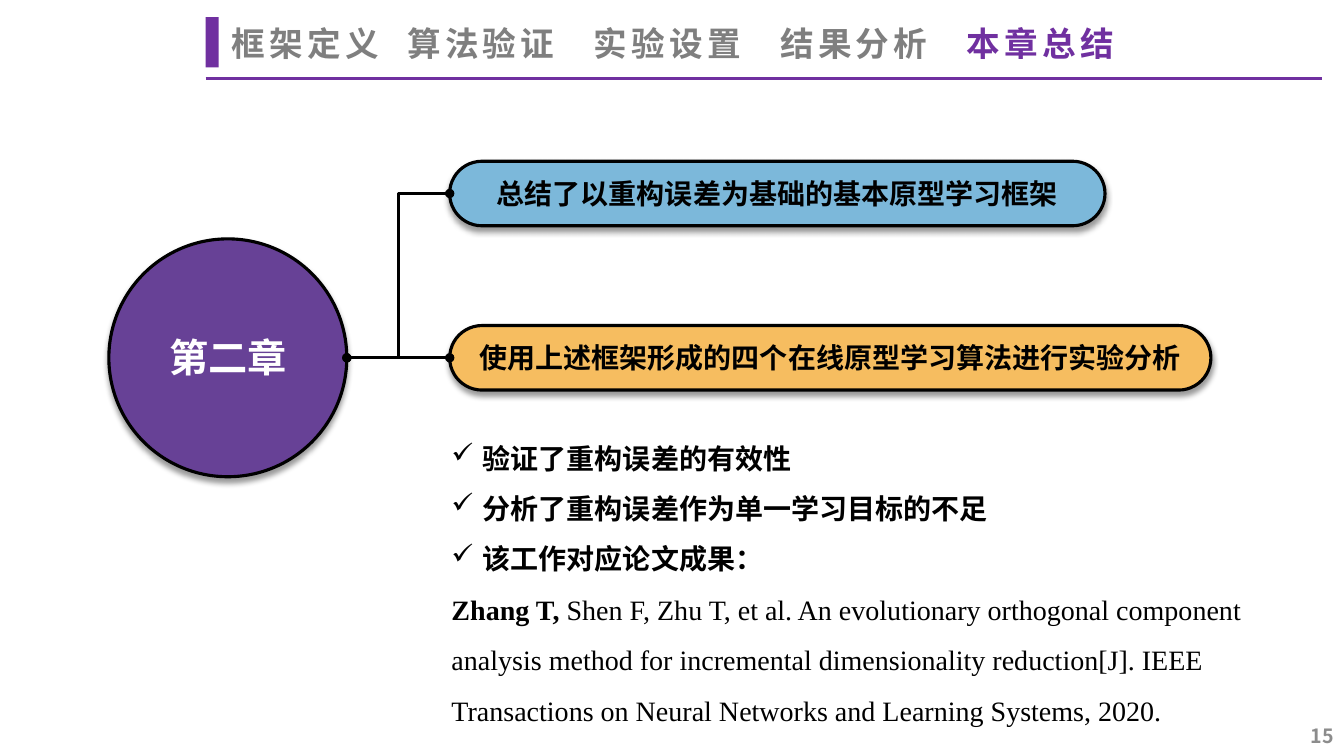
from dataclasses import dataclass

from lxml.etree import SubElement
from pptx import Presentation
from pptx.dml.color import RGBColor
from pptx.enum.shapes import MSO_CONNECTOR, MSO_SHAPE
from pptx.enum.text import MSO_ANCHOR, MSO_AUTO_SIZE, PP_ALIGN
from pptx.oxml.ns import qn
from pptx.util import Inches, Pt


@dataclass(frozen=True)
class Theme:
    accent: str = "7030A0"
    circle: str = "674196"
    blue: str = "7CB8DA"
    orange: str = "F6BD60"
    muted: str = "7F7F7F"
    number: str = "8C8C8C"
    ink: str = "000000"
    white: str = "FFFFFF"
    chinese: str = "Noto Sans CJK SC"
    latin: str = "Calibri"
    serif: str = "Times New Roman"
    number_size: int = 14
    body_size: int = 20
    title_size: int = 24
    chapter_size: int = 28
    line_width: float = 2.25


@dataclass(frozen=True)
class Box:
    left: float
    top: float
    width: float
    height: float

    @property
    def middle(self) -> float:
        return self.top + self.height / 2

    def lengths(self) -> list:
        return [Inches(value) for value in (self.left, self.top, self.width, self.height)]


@dataclass(frozen=True)
class Finding:
    text: str
    box: Box
    fill: str


THEME = Theme()
CIRCLE = Box(1.08, 2.37, 2.36, 2.36)
FINDINGS = [
    Finding("总结了以重构误差为基础的基本原型学习框架", Box(4.46, 1.6, 6.5, 0.64), THEME.blue),
    Finding("使用上述框架形成的四个在线原型学习算法进行实验分析", Box(4.46, 3.23, 7.55, 0.64), THEME.orange),
]
SECTIONS = ["框架定义", "算法验证", "实验设置", "结果分析", "本章总结"]
FIRST_TAB, TAB_STEP = 1.74, 1.85
POINTS = ["验证了重构误差的有效性", "分析了重构误差作为单一学习目标的不足", "该工作对应论文成果："]
AUTHOR = "Zhang T, "
CITATION = (
    "Shen F, Zhu T, et al. An evolutionary orthogonal component analysis method for "
    "incremental dimensionality reduction[J]. IEEE Transactions on Neural Networks and "
    "Learning Systems, 2020."
)


def add_text(paragraph, text: str, *, size: float = THEME.body_size, color: str = THEME.ink,
             font: str = THEME.latin, bold: bool = True, spacing: int = 0) -> None:
    run = paragraph.add_run()
    run.text = text
    run.font.size = Pt(size)
    run.font.bold = bold
    run.font.name = font
    run.font.color.rgb = RGBColor.from_string(color)
    properties = run._r.get_or_add_rPr()
    SubElement(properties, qn("a:ea")).set("typeface", THEME.chinese)
    if spacing:
        properties.set("spc", str(spacing * 100))


def add_text_box(slide, box: Box, anchor=MSO_ANCHOR.TOP):
    frame = slide.shapes.add_textbox(*box.lengths()).text_frame
    frame.word_wrap = True
    frame.vertical_anchor = anchor
    return frame


def add_panel(slide, kind, box: Box, fill: str):
    shape = slide.shapes.add_shape(kind, *box.lengths())
    shape.fill.solid()
    shape.fill.fore_color.rgb = RGBColor.from_string(fill)
    shape.line.color.rgb = RGBColor.from_string(THEME.ink)
    shape.line.width = Pt(THEME.line_width)
    shape.shadow.inherit = False
    effects = shape._element.spPr.find(qn("a:effectLst"))
    shadow = SubElement(effects, qn("a:outerShdw"), blurRad=str(Pt(4)), dist=str(Pt(3)),
                        dir="5400000", algn="t", rotWithShape="0")
    color = SubElement(shadow, qn("a:srgbClr"), val=THEME.ink)
    SubElement(color, qn("a:alpha"), val="40000")
    return shape


def add_line(slide, kind, start: tuple[float, float], end: tuple[float, float], color: str,
             dots: bool = False) -> None:
    connector = slide.shapes.add_connector(kind, *[Inches(value) for value in start + end])
    connector.line.color.rgb = RGBColor.from_string(color)
    connector.line.width = Pt(THEME.line_width)
    if dots:
        line = connector.line._get_or_add_ln()
        for tag in ("a:headEnd", "a:tailEnd"):
            SubElement(line, qn(tag), type="oval")
    SubElement(connector._element.spPr, qn("a:effectLst"))


def add_header(slide) -> None:
    add_line(slide, MSO_CONNECTOR.STRAIGHT, (2.04, 0.78), (13.11, 0.78), THEME.accent)
    marker = slide.shapes.add_shape(MSO_SHAPE.RECTANGLE, *Box(2.04, 0.17, 0.13, 0.5).lengths())
    marker.fill.solid()
    marker.fill.fore_color.rgb = RGBColor.from_string(THEME.accent)
    marker.line.fill.background()
    marker.shadow.inherit = False

    title = slide.shapes.title
    title.left, title.top, title.width, title.height = Box(2.2, 0.21, 11.03, 0.49).lengths()
    frame = title.text_frame
    frame.auto_size = MSO_AUTO_SIZE.NONE
    frame.vertical_anchor = MSO_ANCHOR.MIDDLE
    paragraph = frame.paragraphs[0]
    tabs = SubElement(paragraph._p.get_or_add_pPr(), qn("a:tabLst"))
    for index in range(len(SECTIONS) - 1):
        position = Inches(FIRST_TAB + index * TAB_STEP)
        SubElement(tabs, qn("a:tab"), pos=str(position), algn="l")
    paragraph.alignment = PP_ALIGN.LEFT
    paragraph.line_spacing = 0.9
    for index, section in enumerate(SECTIONS):
        current = index == len(SECTIONS) - 1
        add_text(paragraph, section if index == 0 else "\t" + section, size=THEME.title_size,
                 color=THEME.accent if current else THEME.muted, font=THEME.chinese, spacing=3)


def add_chapter(slide) -> None:
    add_panel(slide, MSO_SHAPE.OVAL, CIRCLE, THEME.circle)
    paragraph = add_text_box(slide, Box(1.28, 3.26, 1.96, 0.57)).paragraphs[0]
    paragraph.alignment = PP_ALIGN.CENTER
    add_text(paragraph, "第二章", size=THEME.chapter_size, color=THEME.white, font=THEME.chinese)


def add_finding(slide, finding: Finding) -> None:
    pill = add_panel(slide, MSO_SHAPE.ROUNDED_RECTANGLE, finding.box, finding.fill)
    pill.adjustments[0] = 0.5
    pill.text_frame.vertical_anchor = MSO_ANCHOR.MIDDLE
    paragraph = pill.text_frame.paragraphs[0]
    paragraph.alignment = PP_ALIGN.CENTER
    add_text(paragraph, finding.text)
    add_line(slide, MSO_CONNECTOR.ELBOW, (CIRCLE.left + CIRCLE.width, CIRCLE.middle),
             (finding.box.left, finding.box.middle), THEME.ink, dots=True)


def add_details(slide) -> None:
    frame = add_text_box(slide, Box(4.38, 4.16, 8.46, 3.08))
    for index, point in enumerate(POINTS):
        paragraph = frame.paragraphs[0] if index == 0 else frame.add_paragraph()
        properties = paragraph._p.get_or_add_pPr()
        properties.set("marL", str(Inches(0.31)))
        properties.set("indent", str(Inches(-0.31)))
        SubElement(properties, qn("a:buChar"), char="✓")
        paragraph.line_spacing = 1.5
        add_text(paragraph, point)
    reference = frame.add_paragraph()
    reference.line_spacing = 1.5
    add_text(reference, AUTHOR, font=THEME.serif)
    add_text(reference, CITATION, font=THEME.serif, bold=False)


def add_slide_number(slide) -> None:
    paragraph = add_text_box(slide, Box(10.33, 7.1, 3, 0.4), MSO_ANCHOR.MIDDLE).paragraphs[0]
    paragraph.alignment = PP_ALIGN.RIGHT
    add_text(paragraph, "15", size=THEME.number_size, color=THEME.number, font=THEME.chinese)


def main() -> None:
    presentation = Presentation()
    presentation.slide_width = Inches(13.33)
    presentation.slide_height = Inches(7.5)
    slide = presentation.slides.add_slide(presentation.slide_layouts[5])
    add_header(slide)
    add_chapter(slide)
    for finding in FINDINGS:
        add_finding(slide, finding)
    add_details(slide)
    add_slide_number(slide)
    presentation.save("out.pptx")


if __name__ == "__main__":
    main()
